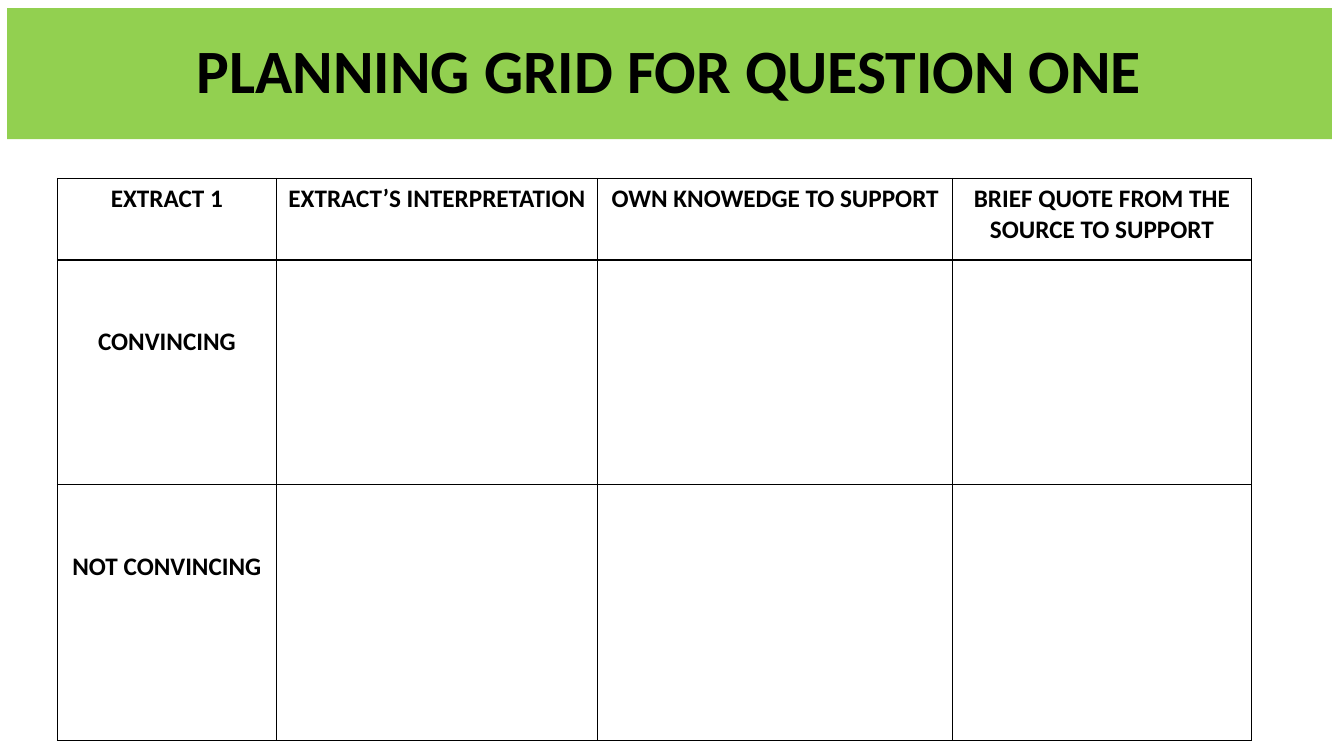
import dataclasses

import lxml.etree
import pptx
import pptx.dml.color
import pptx.enum.text
import pptx.oxml.ns
import pptx.slide
import pptx.table
import pptx.text.text
import pptx.util


@dataclasses.dataclass(frozen=True)
class Theme:
    font: str = "Calibri"
    ink: str = "000000"
    banner: str = "92D050"
    title_size: float = 44
    cell_size: float = 18
    border_width: float = 1


@dataclasses.dataclass(frozen=True)
class Column:
    heading: str
    width: float


@dataclasses.dataclass(frozen=True)
class Row:
    label: str
    height: float
    top_margin: float


THEME = Theme()
TITLE = "PLANNING GRID FOR QUESTION ONE"
COLUMNS = [
    Column("EXTRACT 1", 2.17),
    Column("EXTRACT’S INTERPRETATION", 3.19),
    Column("OWN KNOWEDGE TO SUPPORT", 3.52),
    Column("BRIEF QUOTE FROM THE SOURCE TO SUPPORT", 2.96),
]
ROWS = [
    Row(COLUMNS[0].heading, 0.81, 0.05),
    Row("CONVINCING", 2.23, 0.66),
    Row("NOT CONVINCING", 2.54, 0.66),
]


def format_text(tf: pptx.text.text.TextFrame, size: float) -> None:
    for p in tf.paragraphs:
        p.alignment = pptx.enum.text.PP_ALIGN.CENTER
        p.font.size = pptx.util.Pt(size)
        for r in p.runs:
            r.font.name = THEME.font
            r.font.size = pptx.util.Pt(size)
            r.font.bold = True
            r.font.color.rgb = pptx.dml.color.RGBColor.from_string(THEME.ink)


def add_borders(cell: pptx.table._Cell) -> None:
    qn = pptx.oxml.ns.qn
    tc_pr = cell._tc.get_or_add_tcPr()
    width = str(pptx.util.Pt(THEME.border_width))
    for i, side in enumerate(("a:lnL", "a:lnR", "a:lnT", "a:lnB")):
        ln = lxml.etree.Element(qn(side), w=width)
        fill = lxml.etree.SubElement(ln, qn("a:solidFill"))
        lxml.etree.SubElement(fill, qn("a:srgbClr"), val=THEME.ink)
        tc_pr.insert(i, ln)


def add_title(s: pptx.slide.Slide) -> None:
    sp = s.shapes.title
    sp.left, sp.top = pptx.util.Inches(0.07), pptx.util.Inches(0.08)
    sp.width, sp.height = pptx.util.Inches(13.14), pptx.util.Inches(1.3)
    sp.fill.solid()
    sp.fill.fore_color.rgb = pptx.dml.color.RGBColor.from_string(THEME.banner)
    tf = sp.text_frame
    tf.text = TITLE
    tf.word_wrap = True
    tf.auto_size = pptx.enum.text.MSO_AUTO_SIZE.NONE
    tf.vertical_anchor = pptx.enum.text.MSO_ANCHOR.MIDDLE
    tf.paragraphs[0].line_spacing = 0.9
    format_text(tf, THEME.title_size)


def add_grid(s: pptx.slide.Slide) -> None:
    width = sum(column.width for column in COLUMNS)
    height = sum(row.height for row in ROWS)
    table = s.shapes.add_table(
        len(ROWS), len(COLUMNS),
        pptx.util.Inches(0.57), pptx.util.Inches(1.77),
        pptx.util.Inches(width), pptx.util.Inches(height),
    ).table
    table.first_row = False
    table.horz_banding = False
    for j, column in enumerate(COLUMNS):
        table.columns[j].width = pptx.util.Inches(column.width)
        table.cell(0, j).text_frame.text = column.heading
    for i, row in enumerate(ROWS):
        table.rows[i].height = pptx.util.Inches(row.height)
        label = table.cell(i, 0)
        label.text_frame.text = row.label
        label.margin_top = pptx.util.Inches(row.top_margin)
    for cell in table.iter_cells():
        cell.fill.background()
        format_text(cell.text_frame, THEME.cell_size)
        add_borders(cell)


def main() -> None:
    prs = pptx.Presentation()
    prs.slide_width = pptx.util.Inches(13.33)
    prs.slide_height = pptx.util.Inches(7.5)
    s = prs.slides.add_slide(prs.slide_layouts.get_by_name("Title Only"))
    add_title(s)
    add_grid(s)
    prs.save("out.pptx")


if __name__ == "__main__":
    main()
